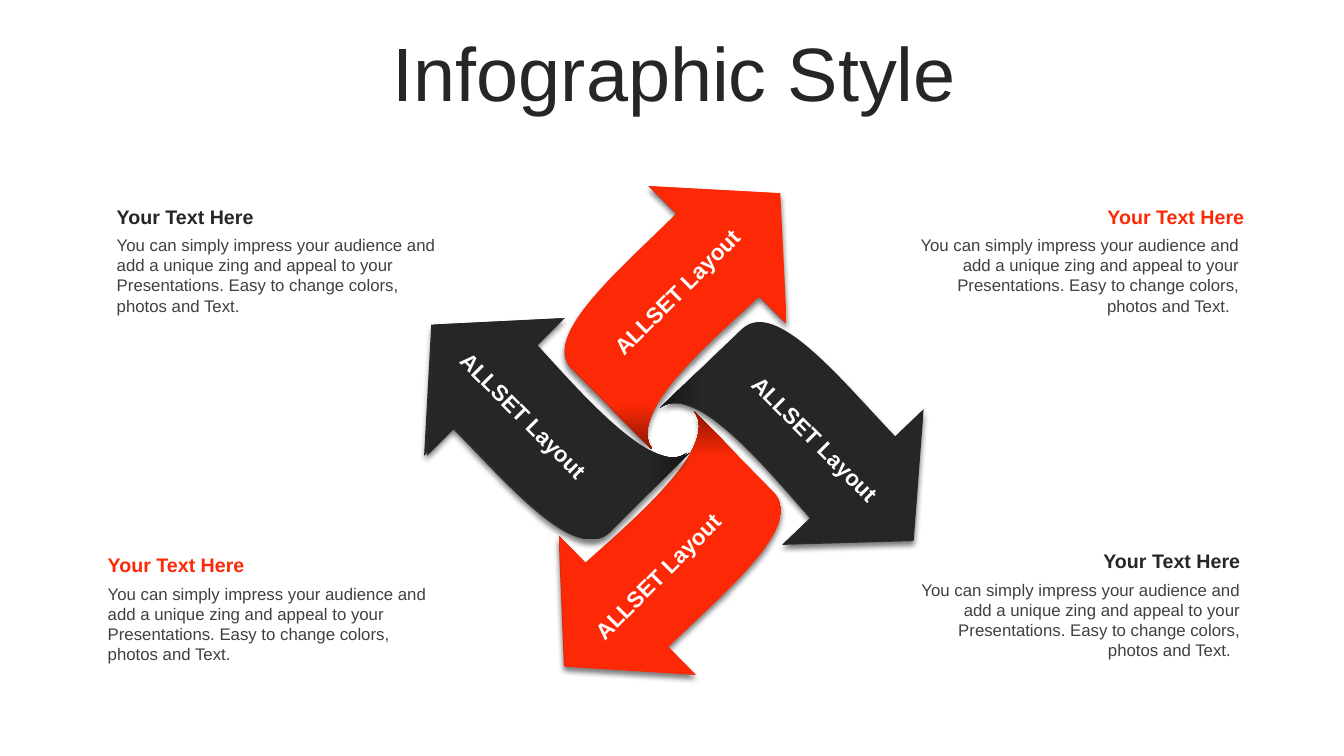
import pptx
import pptx.dml.color
import pptx.enum.text
import pptx.oxml
import pptx.oxml.ns
import pptx.util
from pptx.util import Inches

COLORS = {
    "dark": "262626",
    "dark_end": "131313",
    "red": "FD2906",
    "red_end": "801301",
    "body": "404040",
    "label": "FFFFFF",
    "shadow": "404040",
}
FONT = "Arial"
ALIGN = pptx.enum.text.PP_ALIGN
AUTO_SIZE = pptx.enum.text.MSO_AUTO_SIZE
BODY = ("You can simply impress your audience and add a unique zing and appeal "
        "to your Presentations. Easy to change colors, photos and Text.")

# Upright arrow: corners in order, and control points of the sides that curve,
# keyed by the number of the side
CORNERS = [(0, 0.87), (0.97, 0), (1.93, 0.87), (1.55, 0.87),
           (1.86, 2.69), (0.75, 2.69), (0.39, 0.87)]
CURVES = {
    3: [(1.52, 1.53), (1.44, 2.63)],
    5: [(0.29, 2.69), (0.39, 1.62)],
}

# Left and top of each layer, rotation, colour
ARROWS = [
    ([(7.16, 3.05), (7.17, 3.04)], 136.2, "dark"),
    ([(5.81, 1.52), (5.82, 1.52)], 45, "red"),
    ([(5.59, 4.32), (5.6, 4.33)], 225.5, "red"),
    ([(4.26, 2.83), (4.29, 2.83)], 315, "dark"),
]
LABELS = [(5.75, 2.67, 315), (7.12, 4.21, 45), (5.56, 5.49, 315), (4.23, 3.98, 45)]

# Left, top, body width, heading colour, alignment, body wording
CAPTIONS = [
    (0.97, 5.44, 3.5, "red", ALIGN.LEFT, BODY),
    (1.06, 1.98, 3.5, "dark", ALIGN.LEFT, BODY),
    (8.9, 5.4, 3.5, "dark", ALIGN.RIGHT, BODY + "  "),
    (8.94, 1.98, 3.45, "red", ALIGN.RIGHT, BODY + "  "),
]


def add_arrow(slide, left, top, rotation, color):
    points = [(Inches(x), Inches(y)) for x, y in CORNERS]
    builder = slide.shapes.build_freeform(*points[0])
    builder.add_line_segments(points[1:], close=True)
    arrow = builder.convert_to_shape(Inches(left), Inches(top))
    bend_sides(arrow)
    arrow.rotation = rotation
    arrow.line.fill.background()
    shade_arrow(arrow, COLORS[color], COLORS[color + "_end"])
    add_shadow(arrow)


def bend_sides(arrow):
    sides = list(arrow._element.iter(pptx.oxml.ns.qn("a:lnTo")))
    for number, controls in CURVES.items():
        curve = pptx.oxml.parse_xml(
            f'<a:cubicBezTo {pptx.oxml.ns.nsdecls("a")}>'
            + "".join(f'<a:pt x="{Inches(x)}" y="{Inches(y)}"/>' for x, y in controls)
            + '</a:cubicBezTo>')
        side = sides[number]
        curve.append(side[0])
        side.getparent().replace(side, curve)


def shade_arrow(arrow, main_color, tail_color):
    arrow.fill.gradient()
    arrow.fill.gradient_angle = 315  # towards the inner corner of the tail
    for stop, position, color in zip(arrow.fill.gradient_stops, (0.85, 1),
                                     (main_color, tail_color)):
        stop.position = position
        stop.color.rgb = pptx.dml.color.RGBColor.from_string(color)


def add_shadow(arrow):
    arrow.shadow.inherit = False
    effects = arrow._element.spPr.find(pptx.oxml.ns.qn("a:effectLst"))
    effects.append(pptx.oxml.parse_xml(
        f'<a:outerShdw {pptx.oxml.ns.nsdecls("a")} blurRad="{pptx.util.Pt(4)}" '
        f'dist="{pptx.util.Pt(3)}" dir="5400000" algn="t" rotWithShape="0">'
        f'<a:srgbClr val="{COLORS["shadow"]}"><a:alpha val="43000"/></a:srgbClr>'
        '</a:outerShdw>'))


def add_text(slide, box, text, size, color, bold=False, align=ALIGN.LEFT,
             auto_size=AUTO_SIZE.SHAPE_TO_FIT_TEXT):
    textbox = slide.shapes.add_textbox(*(Inches(length) for length in box))
    frame = textbox.text_frame
    frame.word_wrap = True
    frame.auto_size = auto_size
    paragraph = frame.paragraphs[0]
    paragraph.text = text
    paragraph.alignment = align
    paragraph.font.name = FONT
    paragraph.font.size = pptx.util.Pt(size)
    paragraph.font.bold = bold
    paragraph.font.color.rgb = pptx.dml.color.RGBColor.from_string(COLORS[color])
    return textbox


def add_title(slide, text):
    title = add_text(slide, (0.36, 0.37, 12.66, 0.79), text, 54, "dark",
                     align=ALIGN.CENTER, auto_size=AUTO_SIZE.NONE)
    title.text_frame.vertical_anchor = pptx.enum.text.MSO_ANCHOR.MIDDLE
    title.text_frame.paragraphs[0].line_spacing = 0.9


def add_label(slide, left, top, rotation):
    label = add_text(slide, (left, top, 2.01, 0.37), "ALLSET Layout", 16, "label",
                     bold=True)
    label.rotation = rotation
    label.text_frame.margin_left = label.text_frame.margin_right = Inches(0.12)


def add_caption(slide, left, top, body_width, color, align, body):
    add_text(slide, (left, top + 0.3, body_width, 0.91), body, 12, "body", align=align)
    add_text(slide, (left, top, 3.5, 0.34), "Your Text Here", 14, color,
             bold=True, align=align)


def main():
    deck = pptx.Presentation()
    deck.slide_width, deck.slide_height = Inches(13.33), Inches(7.5)
    slide = deck.slides.add_slide(deck.slide_layouts[6])

    add_title(slide, "Infographic Style")

    # Pinwheel of layered arrows
    for layers, rotation, color in ARROWS:
        for left, top in layers:
            add_arrow(slide, left, top, rotation, color)
    for label in LABELS:
        add_label(slide, *label)

    # Captions in the corners
    for caption in CAPTIONS:
        add_caption(slide, *caption)

    deck.save("out.pptx")


if __name__ == "__main__":
    main()
